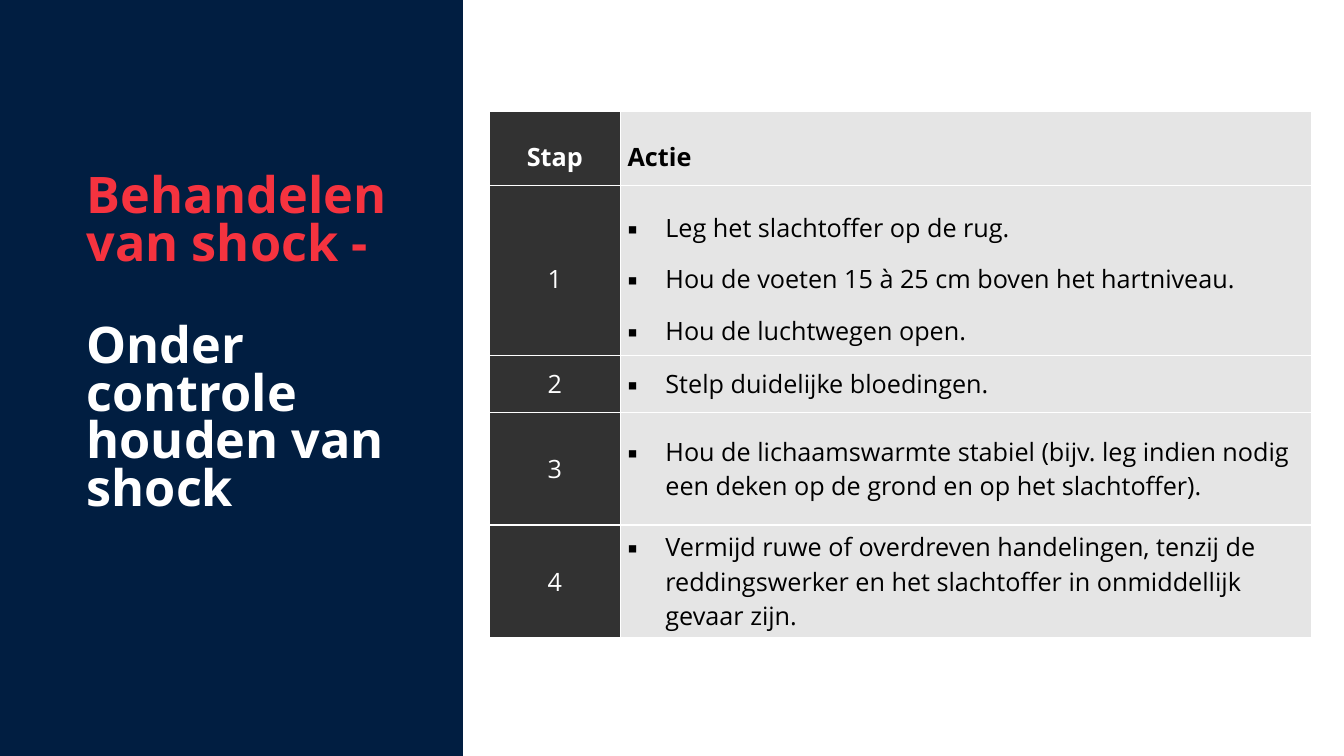
from lxml import etree
from pptx import Presentation
from pptx import util as u
from pptx.dml import color
from pptx.enum import shapes, text
from pptx.oxml import ns


def paint(target, hex_code):
    if hasattr(target, "solid"):
        target.solid()
        target = target.fore_color
    else:
        target = target.color
    target.rgb = color.RGBColor.from_string(hex_code)


def add_xml(parent, tag, position=None, **attributes):
    node = etree.Element(ns.qn(tag), attributes)
    parent.insert(len(parent) if position is None else position, node)
    return node


deck = Presentation()
deck.slide_width, deck.slide_height = u.Pt(960), u.Pt(540)
slide = deck.slides.add_slide(deck.slide_layouts[5])

panel = slide.shapes.add_shape(
    shapes.MSO_SHAPE.RECTANGLE, u.Pt(-1.4), u.Pt(-0.7), u.Pt(332), u.Pt(541))
panel.shadow.inherit = False
paint(panel.fill, "011E41")
panel.line.fill.background()

heading = slide.shapes.title
heading.element.addprevious(panel.element)
heading_place = {"left": 54.7, "top": 46.8, "width": 233.3, "height": 400.3}
for name, value in heading_place.items():
    setattr(heading, name, u.Pt(value))
heading_frame = heading.text_frame
frame_format = {"word_wrap": True, "auto_size": text.MSO_AUTO_SIZE.NONE,
                "vertical_anchor": text.MSO_ANCHOR.MIDDLE,
                "margin_left": u.Pt(7.2), "margin_right": u.Pt(7.2),
                "margin_top": u.Pt(3.6), "margin_bottom": u.Pt(3.6)}
for name, value in frame_format.items():
    setattr(heading_frame, name, value)

heading_font = {"name": "Open Sans", "size": u.Pt(36), "bold": True}
heading_parts = [("Behandelen van shock -", "F5333F", 0),
                 ("Onder controle houden van shock", "FFFFFF", 38.7)]
for index, (words, hex_code, gap) in enumerate(heading_parts):
    part = heading_frame.add_paragraph() if index else heading_frame.paragraphs[0]
    part.text = words
    part.alignment = text.PP_ALIGN.LEFT
    part.line_spacing = 0.79
    part.space_before = u.Pt(gap)
    for name, value in heading_font.items():
        setattr(part.font, name, value)
    paint(part.font, hex_code)

steps = [
    ("Stap", ["Actie"], 53.3, 1.5),
    ("1", ["Leg het slachtoffer op de rug.",
           "Hou de voeten 15 à 25 cm boven het hartniveau.",
           "Hou de luchtwegen open."], 121.5, 1.5),
    ("2", ["Stelp duidelijke bloedingen."], 40.3, 1),
    ("3", ["Hou de lichaamswarmte stabiel (bijv. leg indien nodig een deken "
           "op de grond en op het slachtoffer)."], 80.6, 1),
    ("4", ["Vermijd ruwe of overdreven handelingen, tenzij de reddingswerker "
           "en het slachtoffer in onmiddellijk gevaar zijn."], 80.6, 1),
]
plan = slide.shapes.add_table(
    len(steps), 2, u.Pt(349.5), u.Pt(79.3), u.Pt(587.4), u.Pt(376.3)).table
for column, width in zip(plan.columns, (93.6, 493.8)):
    column.width = u.Pt(width)

cell_format = {"vertical_anchor": text.MSO_ANCHOR.MIDDLE,
               "margin_left": u.Pt(5.2), "margin_right": u.Pt(5.2),
               "margin_top": 0, "margin_bottom": 0}
for row, (step, actions, height, spacing) in enumerate(steps):
    plan.rows[row].height = u.Pt(height)
    cell_font = {"name": "Open Sans", "size": u.Pt(18), "bold": row == 0}
    columns = [([step], "323232", "FFFFFF", text.PP_ALIGN.CENTER),
               (actions, "A6A6A6", "000000", text.PP_ALIGN.LEFT)]
    for col, (lines, back, ink, alignment) in enumerate(columns):
        cell = plan.cell(row, col)
        for name, value in cell_format.items():
            setattr(cell, name, value)
        paint(cell.fill, back)
        properties = cell._tc.get_or_add_tcPr()
        if col:
            add_xml(properties.find(".//" + ns.qn("a:srgbClr")), "a:alpha", val="29000")
        for position, side in enumerate(("a:lnL", "a:lnR", "a:lnT", "a:lnB")):
            border = add_xml(properties, side, position, w=str(u.Pt(1)))
            add_xml(add_xml(border, "a:solidFill"), "a:srgbClr", val="FFFFFF")
        cell.text_frame.text = "\n".join(lines)
        for line in cell.text_frame.paragraphs:
            line.alignment = alignment
            line.line_spacing = spacing
            if row and col:
                indents = line._p.get_or_add_pPr()
                indents.set("marL", str(u.Pt(27)))
                indents.set("indent", str(u.Pt(-27)))
                add_xml(add_xml(indents, "a:buClr"), "a:srgbClr", val="000000")
                add_xml(indents, "a:buFont", typeface="Open Sans")
                add_xml(indents, "a:buChar", char="▪")
            for name, value in cell_font.items():
                setattr(line.font, name, value)
            paint(line.font, ink)

deck.save("out.pptx")
